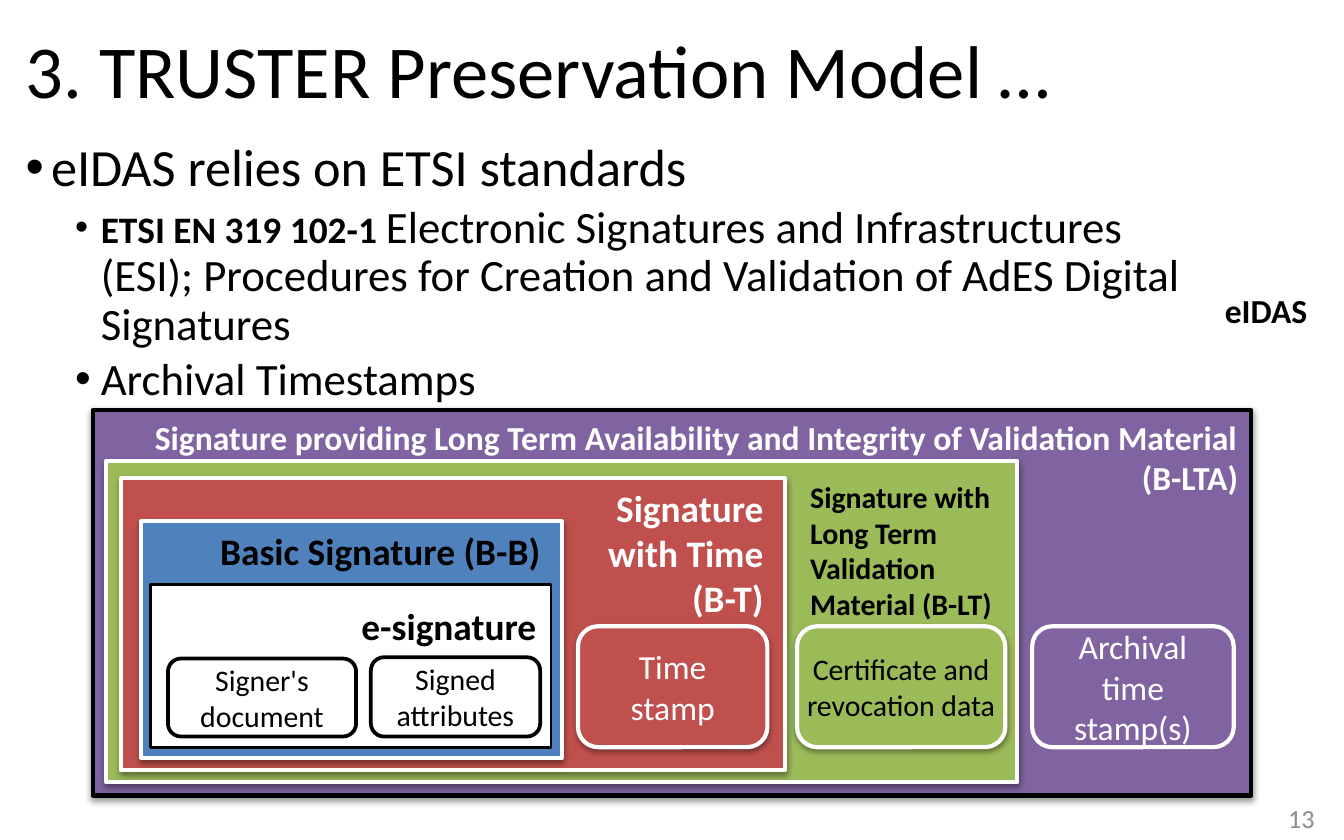
from lxml.etree import SubElement
from pptx import Presentation
from pptx.dml.color import RGBColor
from pptx.enum.shapes import MSO_SHAPE as Shape
from pptx.enum.text import MSO_ANCHOR as Anchor, MSO_AUTO_SIZE as AutoSize, PP_ALIGN as Align
from pptx.oxml.ns import qn
from pptx.util import Inches, Pt

COLORS = {
    "black": "000000",
    "white": "FFFFFF",
    "gray": "8C8C8C",
    "purple": "8064A2",
    "green": "9BBB59",
    "red": "C0504D",
    "blue": "4F81BD",
}
FONT = "Calibri"


def color(name):
    return RGBColor.from_string(COLORS[name])


def set_box(item, box):
    item.left, item.top, item.width, item.height = (Inches(value) for value in box)


def inside(box, left, top, width, height):
    return box[0] + left, box[1] + top, width, height


def style_font(font, size, ink="black", bold=False):
    font.name = FONT
    font.size = Pt(size)
    font.bold = bold
    font.color.rgb = color(ink)


def write_lines(frame, text, size, ink, bold, align):
    frame.text = text
    for para in frame.paragraphs:
        para.alignment = align
        style_font(para.font, size, ink, bold)


def add_label(page, box, text, size, ink="black", bold=True, align=Align.RIGHT,
              wrap=True, anchor=Anchor.TOP):
    label = page.shapes.add_textbox(*(Inches(value) for value in box))
    label.text_frame.word_wrap = wrap
    label.text_frame.vertical_anchor = anchor
    write_lines(label.text_frame, text, size, ink, bold, align)


def add_shadow(shape):
    effects = shape._element.spPr.find(qn("a:effectLst"))
    shadow = SubElement(effects, qn("a:outerShdw"), blurRad=str(Pt(3.1)),
                        dist=str(Pt(1.6)), dir="5400000", rotWithShape="0")
    shade = SubElement(shadow, qn("a:srgbClr"), val=COLORS["black"])
    SubElement(shade, qn("a:alpha"), val="38000")


def add_panel(page, box, fill, line="white", weight=2.25, shadow=True, kind=Shape.RECTANGLE):
    panel = page.shapes.add_shape(kind, *(Inches(value) for value in box))
    panel.fill.solid()
    panel.fill.fore_color.rgb = color(fill)
    panel.line.color.rgb = color(line)
    panel.line.width = Pt(weight)
    panel.shadow.inherit = False
    if shadow:
        add_shadow(panel)
    return panel


def add_part(page, box, text, fill, size, ink, line="white", weight=2.25, shadow=True, inset=None):
    part = add_panel(page, box, fill, line, weight, shadow, Shape.ROUNDED_RECTANGLE)
    frame = part.text_frame
    frame.word_wrap = True
    frame.vertical_anchor = Anchor.MIDDLE
    if inset is not None:
        frame.margin_left = frame.margin_right = Inches(inset)
        frame.margin_top = frame.margin_bottom = Inches(inset)
    write_lines(frame, text, size, ink, False, Align.CENTER)


def fill_title(page, box):
    title = page.shapes.title
    set_box(title, box)
    frame = title.text_frame
    frame.text = "3. TRUSTER Preservation Model …"
    frame.vertical_anchor = Anchor.MIDDLE
    frame.auto_size = AutoSize.NONE
    para = frame.paragraphs[0]
    para.alignment = Align.LEFT
    para.line_spacing = 0.9
    style_font(para.font, 40)


def fill_body(page, box):
    body = page.placeholders[1]
    set_box(body, box)
    frame = body.text_frame
    frame.auto_size = AutoSize.NONE
    items = [
        (0, 7.5, 0.19, [("eIDAS relies on ETSI standards", 28, False)]),
        (1, 3.8, 0.56, [
            ("ETSI EN 319 102-1 ", 20, True),
            ("Electronic Signatures and Infrastructures (ESI); Procedures for Creation "
             "and Validation of AdES Digital Signatures", 24, False),
        ]),
        (1, 3.8, 0.56, [("Archival Timestamps", 24, False)]),
    ]
    for index, (level, space, indent, spans) in enumerate(items):
        para = frame.add_paragraph() if index else frame.paragraphs[0]
        para.level = level
        para.line_spacing = 0.9
        para.space_before = Pt(space)
        props = para._p.get_or_add_pPr()
        props.set("marL", str(Inches(indent)))
        props.set("indent", str(Inches(-0.19)))
        SubElement(props, qn("a:buFont"), typeface="Arial")
        SubElement(props, qn("a:buChar"), char="•")
        for text, size, bold in spans:
            span = para.add_run()
            span.text = text
            style_font(span.font, size, bold=bold)


def draw_archive_level(page, box):
    add_panel(page, box, "purple", line="black")
    add_label(page, inside(box, 0.1, 0, 8.52, 0.71),
              "Signature providing Long Term Availability and Integrity of "
              "Validation Material (B-LTA)", 18, "white")
    add_part(page, inside(box, 6.99, 1.61, 1.5, 0.9), "Archival time stamp(s)",
             "purple", 18, "white", shadow=False)
    draw_long_term_level(page, inside(box, 0.1, 0.38, 6.78, 2.39))


def draw_long_term_level(page, box):
    add_panel(page, box, "green")
    add_label(page, inside(box, 5.14, 0.08, 1.61, 1.18),
              "Signature with Long Term Validation Material (B-LT)", 16, align=Align.LEFT)
    add_part(page, inside(box, 5.14, 1.23, 1.55, 0.9), "Certificate and\nrevocation data",
             "green", 16, "black", inset=0)
    draw_time_level(page, inside(box, 0.11, 0.13, 4.94, 2.17))


def draw_time_level(page, box):
    add_panel(page, box, "red")
    add_label(page, inside(box, 3.4, 0, 1.48, 1.11), "Signature with Time (B-T)", 20, "white")
    add_part(page, inside(box, 3.4, 1.1, 1.41, 0.9), "Time stamp", "red", 18, "white")
    draw_basic_level(page, inside(box, 0.15, 0.32, 3.13, 1.76))


def draw_basic_level(page, box):
    add_panel(page, box, "blue")
    add_label(page, inside(box, 0.07, 0, 3, 0.44), "Basic Signature (B-B)", 20)
    draw_e_signature(page, inside(box, 0.07, 0.47, 2.98, 1.21))


def draw_e_signature(page, box):
    add_panel(page, box, "white", line="black", weight=1.5, shadow=False)
    add_label(page, inside(box, 1.36, 0.09, 1.61, 0.44), "e-signature", 20)
    for left, top, width, height, text in [
        (0.13, 0.55, 1.4, 0.58, "Signer's\ndocument"),
        (1.64, 0.54, 1.26, 0.59, "Signed\nattributes"),
    ]:
        add_part(page, inside(box, left, top, width, height), text, "white", 16, "black",
                 line="black", weight=2, shadow=False)


def main():
    deck = Presentation()
    deck.slide_width = Inches(10)
    deck.slide_height = Inches(6.25)
    page = deck.slides.add_slide(deck.slide_layouts[1])
    fill_title(page, (0.09, 0.11, 9.79, 0.88))
    fill_body(page, (0.09, 1, 8.92, 5.16))
    add_label(page, (7.63, 5.95, 2.25, 0.28), "13", 14, "gray", bold=False, anchor=Anchor.MIDDLE)
    add_label(page, (9.01, 2.11, 0.82, 0.4), "eIDAS", 18, align=Align.CENTER, wrap=False)
    draw_archive_level(page, (0.69, 3.05, 8.62, 2.87))
    deck.save("out.pptx")


if __name__ == "__main__":
    main()
